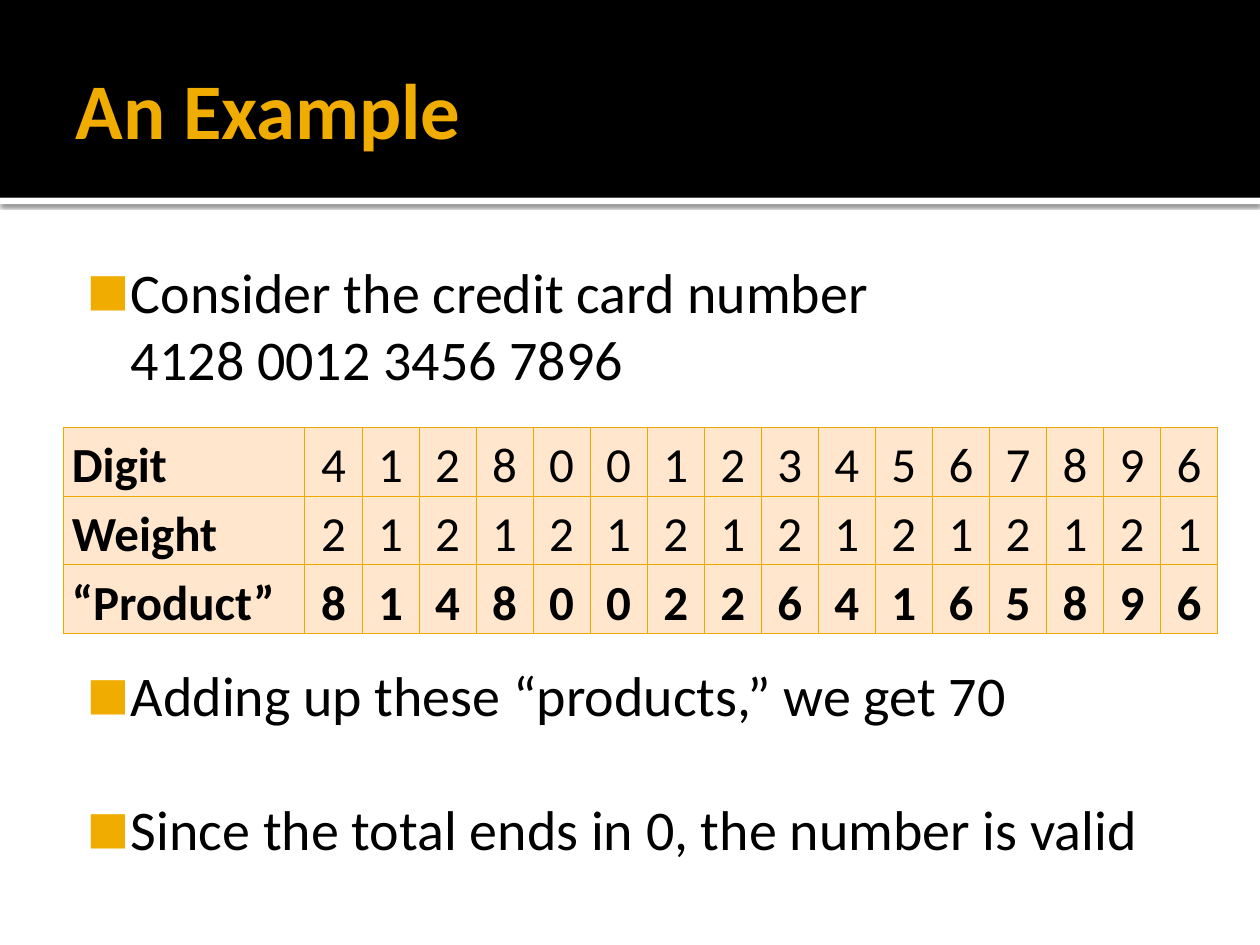
from lxml.etree import SubElement
from pptx import Presentation
from pptx.dml.color import RGBColor
from pptx.enum.shapes import MSO_SHAPE
from pptx.enum.text import MSO_ANCHOR, PP_ALIGN
from pptx.oxml import parse_xml
from pptx.oxml.ns import qn
from pptx.util import Inches, Pt

NS = 'xmlns:a="http://schemas.openxmlformats.org/drawingml/2006/main"'


def color(value):
    """Turn a hex string into a colour."""
    return RGBColor.from_string(value)


def write(p, text, size=32, c="000000", bold=False, font="Calibri", align=PP_ALIGN.LEFT, spacing=None):
    """Write text into a paragraph, one run per line, and format it."""
    p.alignment = align
    p.line_spacing = spacing
    for i, line in enumerate(text.split("\n")):
        if i:
            p.add_line_break()
        r = p.add_run()
        r.text = line
        r.font.size, r.font.bold, r.font.name = Pt(size), bold, font
        r.font.color.rgb = color(c)


def set_insets(frame, left, top, right, bottom):
    """Set the margins of a text frame or a cell in inches."""
    frame.margin_left, frame.margin_top = Inches(left), Inches(top)
    frame.margin_right, frame.margin_bottom = Inches(right), Inches(bottom)


class Deck:
    """Hold the style and the current slide."""

    accent = "F0AD00"
    cell_fill = "FFE6CD"
    border = "EBA900"
    line_pitch = 38.4

    def __init__(self):
        """Start a presentation with one title-only slide."""
        self.prs = Presentation()
        self.prs.slide_width, self.prs.slide_height = Inches(10), Inches(7.5)
        self.s = self.prs.slides.add_slide(self.prs.slide_layouts[5])

    def bar(self, top, height, fill, shadow=False):
        """Add a full-width bar, with a soft shadow below if asked."""
        sp = self.s.shapes.add_shape(MSO_SHAPE.RECTANGLE, 0, Inches(top), Inches(10), Inches(height))
        sp.fill.solid()
        sp.fill.fore_color.rgb = color(fill)
        sp.line.fill.background()
        sp.shadow.inherit = False
        if shadow:
            effects = sp._element.spPr.find(qn("a:effectLst"))
            effects.append(parse_xml(
                f'<a:outerShdw {NS} blurRad="{Pt(2.5)}" dist="{Pt(0.8)}" dir="5400000" rotWithShape="0">'
                '<a:srgbClr val="000000"><a:alpha val="60000"/></a:srgbClr></a:outerShdw>'))

    def title(self, text):
        """Place the title in front of the bars."""
        sp = self.s.shapes.title
        self.s.shapes._spTree.append(sp._element)
        sp.left, sp.top, sp.width, sp.height = Inches(0.5), Inches(0.17), Inches(9), Inches(1.37)
        tf = sp.text_frame
        tf.vertical_anchor = MSO_ANCHOR.MIDDLE
        set_insets(tf, 0.1, 0.05, 0.05, 0.05)
        write(tf.paragraphs[0], text, size=45, c=self.accent, bold=True)

    def bullets(self, items):
        """Add bullets, each given as text and the lines of space before it."""
        sp = self.s.shapes.add_textbox(Inches(0.5), Inches(1.94), Inches(9), Inches(5.06))
        tf = sp.text_frame
        tf.word_wrap = True
        set_insets(tf, 0.06, 0.1, 0.1, 0.05)
        for i, (text, gap) in enumerate(items):
            p = tf.add_paragraph() if i else tf.paragraphs[0]
            write(p, text, spacing=Pt(self.line_pitch))
            p.space_before = Pt(gap * self.line_pitch)
            pPr = p._p.get_or_add_pPr()
            pPr.set("marL", str(Inches(0.48)))
            pPr.set("indent", str(Inches(-0.35)))
            SubElement(SubElement(pPr, qn("a:buClr")), qn("a:srgbClr"), val=self.accent)
            SubElement(pPr, qn("a:buSzPct"), val="80000")
            SubElement(pPr, qn("a:buFont"), typeface="Calibri")
            SubElement(pPr, qn("a:buChar"), char="■")

    def table(self, rows):
        """Add a table of digits from label, digits and bold triples."""
        count = len(rows[0][1])
        frame = self.s.shapes.add_table(
            len(rows), count + 1, Inches(0.5), Inches(3.39), Inches(9.17), Inches(1.64))
        tbl = frame.table
        tbl.first_row = tbl.horz_banding = False
        tbl.columns[0].width = Inches(1.92)
        for i in range(1, count + 1):
            tbl.columns[i].width = Inches(7.25 / count)
        for i, (label, digits, bold) in enumerate(rows):
            self.cell(tbl.cell(i, 0), label, True, PP_ALIGN.LEFT)
            for j, digit in enumerate(digits, 1):
                self.cell(tbl.cell(i, j), digit, bold, PP_ALIGN.CENTER)

    def cell(self, cell, text, bold, align):
        """Fill, border and write one cell."""
        set_insets(cell, 0.07, 0, 0.07, 0)
        write(cell.text_frame.paragraphs[0], text, size=28, bold=bold, align=align, spacing=1.15)
        tcPr = cell._tc.get_or_add_tcPr()
        for side in ("lnL", "lnR", "lnT", "lnB"):
            ln = SubElement(tcPr, qn(f"a:{side}"), w=str(Pt(0.5)))
            SubElement(SubElement(ln, qn("a:solidFill")), qn("a:srgbClr"), val=self.border)
        cell.fill.solid()
        cell.fill.fore_color.rgb = color(self.cell_fill)


def main():
    """Build the slide and save it."""
    deck = Deck()
    deck.bar(1.57, 0.05, "FFFFFF", shadow=True)
    deck.bar(0, 1.57, "000000")
    deck.title("An Example")
    deck.bullets([
        ("Consider the credit card number\n4128 0012 3456 7896", 0),
        ("Adding up these “products,” we get 70", 4),
        ("Since the total ends in 0, the number is valid", 1),
    ])
    deck.table([
        ("Digit", "4128001234567896", False),
        ("Weight", "21" * 8, False),
        ("“Product”", "8148002264165896", True),
    ])
    deck.prs.save("out.pptx")


if __name__ == "__main__":
    main()
